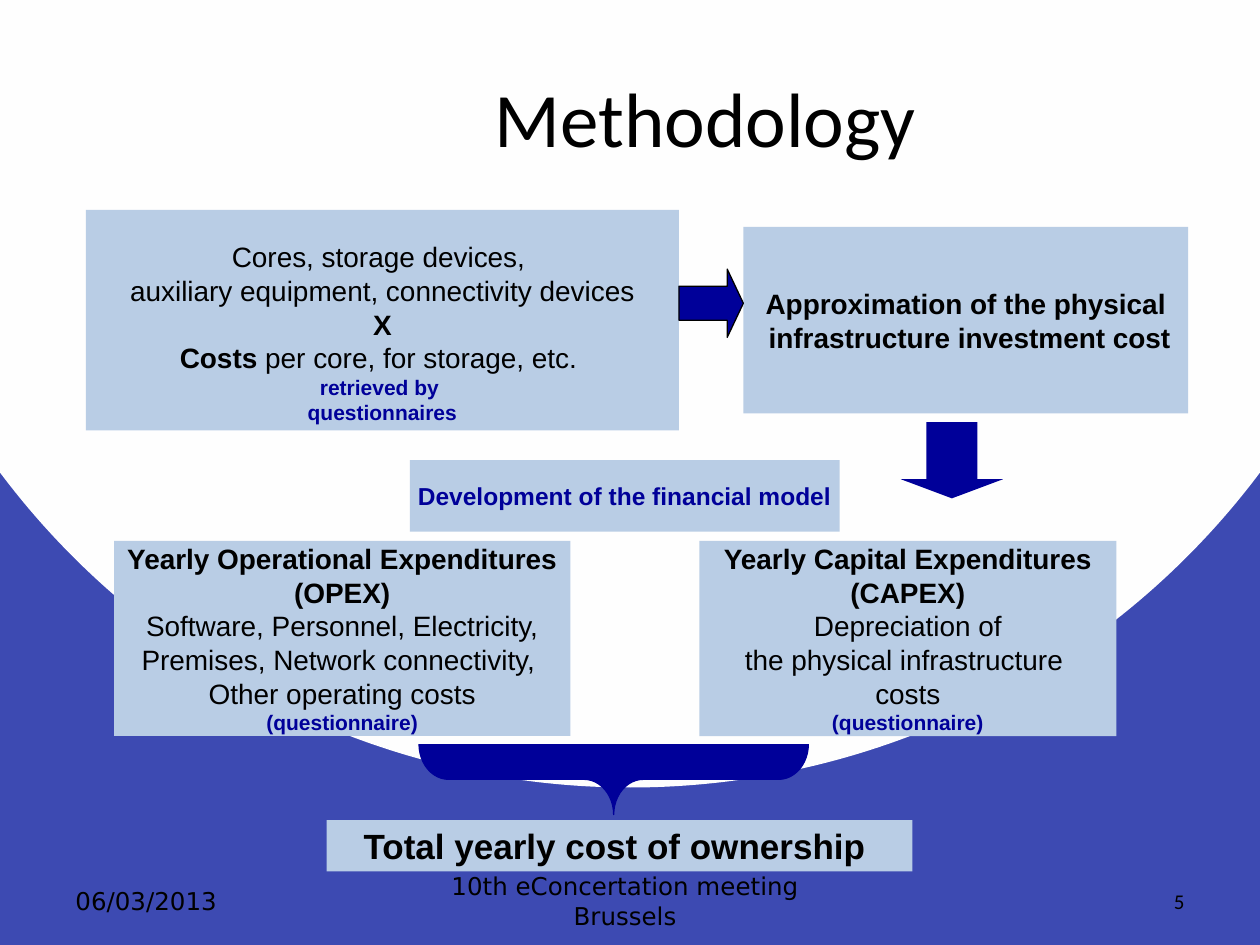
from lxml.etree import fromstring
from pptx import Presentation
from pptx.dml.color import RGBColor
from pptx.enum.shapes import MSO_SHAPE
from pptx.enum.text import MSO_ANCHOR, PP_ALIGN
from pptx.util import Pt

COLOURS = {"panel": "B9CDE5", "accent": "000099", "text": "000000",
           "centre": "FFFFFF", "rim": "FEFEFE", "outside": "3D4AB2"}
NAMESPACES = ('xmlns:a="http://schemas.openxmlformats.org/drawingml/2006/main" '
              'xmlns:p="http://schemas.openxmlformats.org/presentationml/2006/main"')


def colour(name):
    return RGBColor.from_string(COLOURS[name])


def write(paragraph, text, size=16, bold=False, ink="text", font="Arial"):
    run = paragraph.add_run()
    run.text = text
    run.font.name = font
    run.font.size = Pt(size)
    run.font.bold = bold
    run.font.color.rgb = colour(ink)


BOLD = {"bold": True}
NOTE = {"size": 12, "bold": True, "ink": "accent"}


class MethodologySlide:
    def __init__(self, presentation):
        self.slide = presentation.slides.add_slide(presentation.slide_layouts[5])
        self.shapes = self.slide.shapes

    def background(self):
        stops = [(0, "centre"), (100000, "rim"), (100000, "outside")]
        stop_xml = "".join(f'<a:gs pos="{pos}"><a:srgbClr val="{COLOURS[name]}"/></a:gs>'
                           for pos, name in stops)
        self.slide.element.cSld.insert(0, fromstring(
            f'<p:bg {NAMESPACES}><p:bgPr><a:gradFill rotWithShape="1">'
            f'<a:gsLst>{stop_xml}</a:gsLst><a:path path="circle">'
            '<a:fillToRect l="50000" t="-80000" r="50000" b="180000"/></a:path>'
            '</a:gradFill><a:effectLst/></p:bgPr></p:bg>'))

    def fill_text(self, holder, lines, align=PP_ALIGN.CENTER, wrap=True):
        """Each line is a list of (text, format) runs."""
        frame = holder.text_frame
        frame.word_wrap = wrap
        frame.vertical_anchor = MSO_ANCHOR.MIDDLE
        for index, runs in enumerate(lines):
            paragraph = frame.add_paragraph() if index else frame.paragraphs[0]
            paragraph.alignment = align
            for text, style in runs:
                write(paragraph, text, **style)
        return frame

    def title(self, text, left, top, width, height):
        heading = self.shapes.title
        heading.left, heading.top = Pt(left), Pt(top)
        heading.width, heading.height = Pt(width), Pt(height)
        self.fill_text(heading, [[(text, {"size": 44, "font": "Calibri"})]])

    def block(self, kind, left, top, width, height, fill, line=None):
        block = self.shapes.add_shape(kind, Pt(left), Pt(top), Pt(width), Pt(height))
        block.shadow.inherit = False
        block.fill.solid()
        block.fill.fore_color.rgb = colour(fill)
        if line:
            block.line.color.rgb = colour(line)
            block.line.width = Pt(0.75)
        else:
            block.line.fill.background()
        return block

    def panel(self, lines, left, top, width, height):
        panel = self.block(MSO_SHAPE.RECTANGLE, left, top, width, height, "panel")
        return self.fill_text(panel, lines, wrap=False)

    def pointer(self, kind, left, top, width, height, adjust, line=None, rotation=0):
        pointer = self.block(kind, left, top, width, height, "accent", line)
        pointer.rotation = rotation
        for index, value in enumerate(adjust):
            pointer.adjustments[index] = value

    def footer(self, text, left, width, align, **style):
        box = self.shapes.add_textbox(Pt(left), Pt(500.4), Pt(width), Pt(28.8))
        self.fill_text(box, [[(text, style)]], align)


def main():
    presentation = Presentation()
    presentation.slide_width, presentation.slide_height = Pt(720), Pt(540)
    page = MethodologySlide(presentation)
    page.background()
    page.title("Methodology", 122.4, 21.6, 561.6, 90)

    # Inputs and the investment cost they lead to
    inputs = page.panel([
        [("Cores, storage devices, ", {})],
        [("auxiliary equipment, connectivity devices", {})],
        [("X", BOLD)],
        [("Costs ", BOLD), ("per core, for storage, etc. ", {})],
        [("retrieved by ", NOTE)],
        [("questionnaires", NOTE)],
    ], 49, 120, 339, 126)
    inputs.margin_top = Pt(17.4)

    # Yearly expenditures
    page.panel([
        [("Yearly Operational Expenditures", BOLD)],
        [("(OPEX)", BOLD)],
        [("Software, Personnel, Electricity,", {})],
        [("Premises, Network connectivity, ", {})],
        [("Other operating costs", {})],
        [("(questionnaire)", NOTE)],
    ], 65.2, 309, 260.8, 111.5)

    # Total, gathered by the brace
    page.panel([[("Total yearly cost of ownership ", {"size": 20, "bold": True})]],
               186.6, 468.6, 334.8, 29.4)
    page.pointer(MSO_SHAPE.RIGHT_BRACE, 330.5, 334.1, 40.3, 222.5,
                 (0.42, 0.5), line="accent", rotation=90)

    page.panel([
        [("Approximation of the physical", BOLD)],
        [(" infrastructure investment cost", BOLD)],
    ], 424.8, 129.6, 254.2, 106.6)
    page.pointer(MSO_SHAPE.RIGHT_ARROW, 388, 153.8, 36.8, 39, (0.5, 0.25), line="text")

    page.panel([
        [("Yearly Capital Expenditures", BOLD)],
        [("(CAPEX)", BOLD)],
        [("Depreciation of", {})],
        [("the physical infrastructure ", {})],
        [("costs", {})],
        [("(questionnaire)", NOTE)],
    ], 399.6, 309, 238.3, 111.6)
    page.pointer(MSO_SHAPE.DOWN_ARROW, 514.8, 241.2, 58.3, 43.6, (0.5, 0.25))

    # Financial model
    page.panel([[("Development of the financial model",
                  {"size": 14, "bold": True, "ink": "accent"})]],
               234.2, 262.9, 245.6, 41)

    # Footer
    page.footer("06/03/2013", 36, 168, PP_ALIGN.LEFT, size=14, font="DejaVu Sans")
    page.footer("10th eConcertation meeting Brussels", 224, 266.4, PP_ALIGN.CENTER,
                size=14, font="DejaVu Sans")
    page.footer("5", 516, 168, PP_ALIGN.RIGHT, size=12, font="Calibri")

    presentation.save("out.pptx")


if __name__ == "__main__":
    main()
